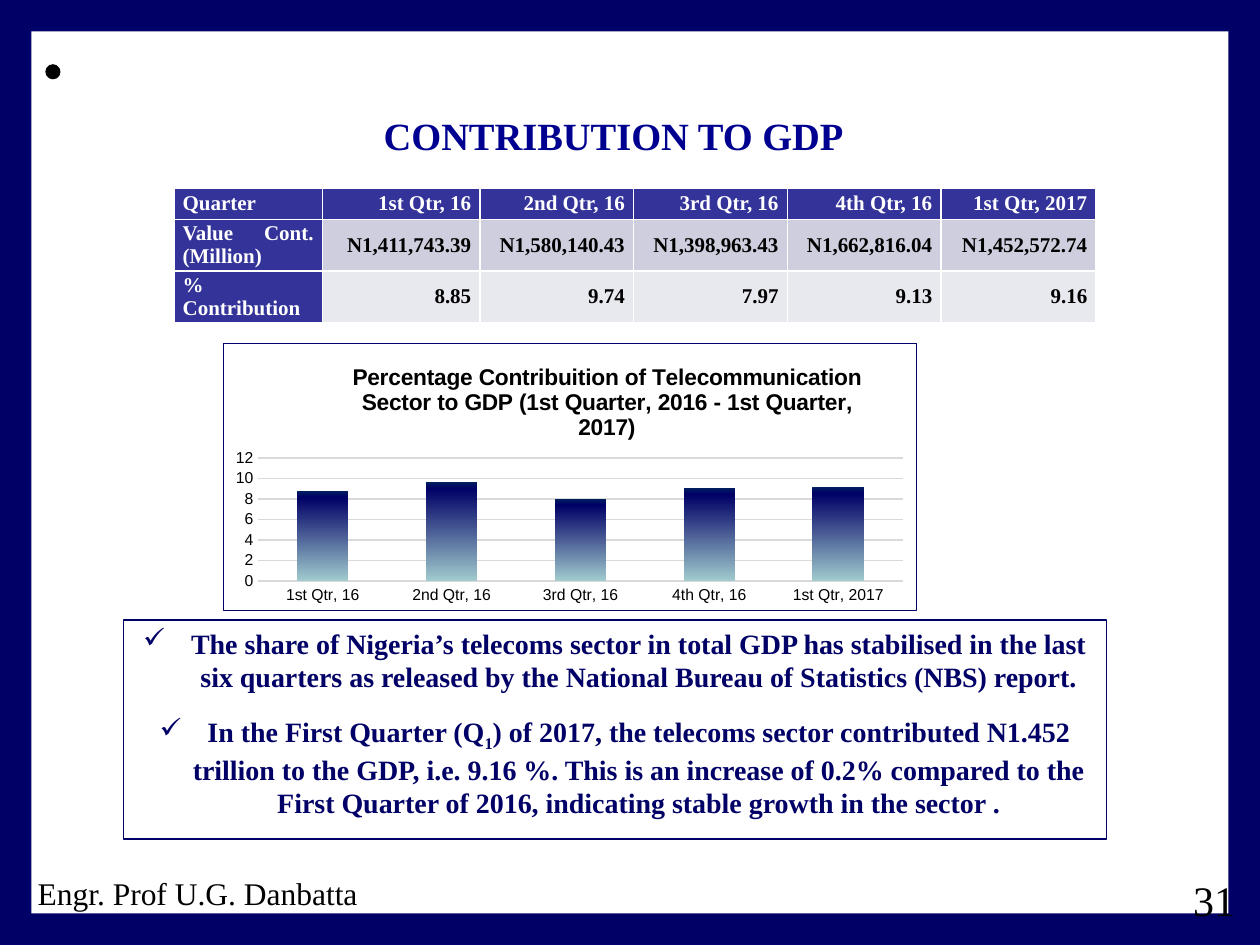
from copy import deepcopy
from dataclasses import dataclass

from pptx import Presentation
from pptx.chart.data import CategoryChartData
from pptx.dml.color import RGBColor
from pptx.enum.chart import XL_CHART_TYPE, XL_TICK_MARK
from pptx.enum.shapes import MSO_SHAPE
from pptx.enum.text import MSO_ANCHOR, PP_ALIGN
from pptx.oxml import parse_xml
from pptx.oxml.ns import nsdecls, qn
from pptx.util import Inches, Pt


@dataclass(frozen=True)
class Theme:
    serif: str = "Times New Roman"
    sans: str = "Arial"
    navy: str = "000066"
    heading: str = "000090"
    header: str = "333399"
    bands: tuple = ("CECEDE", "E8E8EF")
    white: str = "FFFFFF"
    black: str = "000000"
    grid: str = "D9D9D9"
    bar_stops: tuple = ((0, "002060"), (0.07, "000066"), (1, "A1CBCE"))
    heading_size: int = 22
    table_size: int = 12
    body_size: int = 16
    footer_size: int = 18
    number_size: int = 24
    chart_title_size: int = 13
    chart_size: int = 10
    axis_size: int = 9


@dataclass(frozen=True)
class Box:
    left: float
    top: float
    width: float
    height: float

    def lengths(self) -> list:
        return [Inches(n) for n in (self.left, self.top, self.width, self.height)]


@dataclass(frozen=True)
class Label:
    text: str
    box: Box
    size: int
    color: str = "000000"
    bold: bool = False
    align: PP_ALIGN = PP_ALIGN.LEFT


THEME = Theme()
QUARTERS = ("1st Qtr, 16", "2nd Qtr, 16", "3rd Qtr, 16", "4th Qtr, 16", "1st Qtr, 2017")
TABLE_ROWS = (
    ("Quarter", *QUARTERS),
    ("Value Cont.\v(Million)", "N1,411,743.39", "N1,580,140.43", "N1,398,963.43",
     "N1,662,816.04", "N1,452,572.74"),
    ("% Contribution", "8.85", "9.74", "7.97", "9.13", "9.16"),
)
COLUMN_WIDTHS = (1.18, 1.25, 1.22, 1.22, 1.22, 1.23)
ROW_HEIGHTS = (0.25, 0.41, 0.41)
CHART_TITLE = ("Percentage Contribuition of Telecommunication Sector to GDP "
               "(1st Quarter, 2016 - 1st Quarter, 2017)")
SHARES = (8.8, 9.7, 8, 9.1, 9.2)
# Each bullet is a list of (text, is subscript) pieces.
BULLETS = (
    (("The share of Nigeria’s telecoms sector in total GDP has stabilised in the last six "
      "quarters as released by the National Bureau of Statistics (NBS) report.", False),),
    (("In the First Quarter (Q", False), ("1", True),
     (") of 2017, the telecoms sector contributed N1.452 trillion to the GDP, i.e. 9.16 %. "
      "This is an increase of 0.2% compared to the First Quarter of 2016, indicating stable "
      "growth in the sector .", False)),
)
LABELS = (
    Label("CONTRIBUTION TO GDP", Box(0.37, 0.84, 9, 0.55), THEME.heading_size,
          THEME.heading, True, PP_ALIGN.CENTER),
    Label("Engr. Prof U.G. Danbatta", Box(0.2, 6.89, 5.29, 0.4), THEME.footer_size),
    Label("31", Box(9.37, 6.89, 1.08, 0.4), THEME.number_size),
)


def rgb(color: str) -> RGBColor:
    return RGBColor.from_string(color)


def style_font(font, size: int, color: str, bold: bool = False, name: str = THEME.serif) -> None:
    formats = {"name": name, "size": Pt(size), "bold": bold}
    for attribute, value in formats.items():
        setattr(font, attribute, value)
    font.color.rgb = rgb(color)


def add_block(slide, box: Box, fill: str = "", line: str = "", preset=MSO_SHAPE.RECTANGLE):
    shape = slide.shapes.add_shape(preset, *box.lengths())
    shape.shadow.inherit = False
    if fill:
        shape.fill.solid()
        shape.fill.fore_color.rgb = rgb(fill)
    else:
        shape.fill.background()
    if line:
        shape.line.color.rgb = rgb(line)
        shape.line.width = Pt(0.75)
    else:
        shape.line.fill.background()
    return shape


def add_label(slide, label: Label) -> None:
    frame = slide.shapes.add_textbox(*label.box.lengths()).text_frame
    frame.word_wrap = True
    paragraph = frame.paragraphs[0]
    paragraph.alignment = label.align
    run = paragraph.add_run()
    run.text = label.text
    style_font(run.font, label.size, label.color, label.bold)


def fill_cell(cell, text: str, fill: str, color: str, align: PP_ALIGN) -> None:
    formats = {"margin_left": Inches(0.07), "margin_right": Inches(0.07), "margin_top": 0,
               "margin_bottom": 0, "vertical_anchor": MSO_ANCHOR.MIDDLE, "text": text}
    for attribute, value in formats.items():
        setattr(cell, attribute, value)
    cell.fill.solid()
    cell.fill.fore_color.rgb = rgb(fill)
    paragraph = cell.text_frame.paragraphs[0]
    paragraph.alignment = align
    for run in paragraph.runs:
        style_font(run.font, THEME.table_size, color, True)
    for line_break in paragraph._p.findall(qn("a:br")):
        line_break.append(deepcopy(paragraph.runs[0].font._element))


def add_gdp_table(slide) -> None:
    box = Box(1.38, 1.49, sum(COLUMN_WIDTHS), sum(ROW_HEIGHTS))
    table = slide.shapes.add_table(len(TABLE_ROWS), len(QUARTERS) + 1, *box.lengths()).table
    table.horz_banding = False
    for column, width in zip(table.columns, COLUMN_WIDTHS):
        column.width = Inches(width)
    for i, (row, height) in enumerate(zip(table.rows, ROW_HEIGHTS)):
        row.height = Inches(height)
        for j, text in enumerate(TABLE_ROWS[i]):
            is_header = i == 0 or j == 0
            fill_cell(table.cell(i, j), text,
                      THEME.header if is_header else THEME.bands[i - 1],
                      THEME.white if is_header else THEME.black,
                      PP_ALIGN.RIGHT if j else PP_ALIGN.JUSTIFY)


def set_layout(element, index: int, **places: float) -> None:
    """Place a chart part by fractions of the chart's size."""
    for old in element.findall(qn("c:layout")):
        element.remove(old)
    target = '<c:layoutTarget val="inner"/>' if "w" in places else ""
    modes = "".join(f'<c:{key}Mode val="edge"/>' for key in "xy")
    values = "".join(f'<c:{key} val="{value}"/>' for key, value in places.items())
    element.insert(index, parse_xml(
        f'<c:layout {nsdecls("c")}><c:manualLayout>{target}{modes}{values}'
        "</c:manualLayout></c:layout>"))


def shade_bars(series) -> None:
    fill = series.format.fill
    fill.gradient()
    fill.gradient_angle = 270
    stop_list = series._element.find(".//" + qn("a:gsLst"))
    stop_list.append(deepcopy(stop_list[0]))
    for stop, (position, color) in zip(fill.gradient_stops, THEME.bar_stops):
        stop.position = position
        stop.color.rgb = rgb(color)


def add_share_chart(slide) -> None:
    data = CategoryChartData()
    data.categories = QUARTERS
    data.add_series("Series 1", SHARES)
    chart = slide.shapes.add_chart(XL_CHART_TYPE.COLUMN_CLUSTERED,
                                   *Box(1.77, 2.72, 5.51, 2.13).lengths(), data).chart
    style_font(chart.font, THEME.chart_size, THEME.black, name=THEME.sans)
    chart.has_legend = False
    chart.has_title = True
    chart.chart_title.include_in_layout = False
    paragraph = chart.chart_title.text_frame.paragraphs[0]
    run = paragraph.add_run()
    run.text = CHART_TITLE
    style_font(run.font, THEME.chart_title_size, THEME.black, True, THEME.sans)
    set_layout(chart.chart_title._element, 1, x=0.18, y=0.06)
    set_layout(chart._chartSpace.chart.plotArea, 0, x=0.05, y=0.43, w=0.93, h=0.46)

    plot = chart.plots[0]
    plot.gap_width = 150
    plot.vary_by_categories = False
    shade_bars(plot.series[0])
    for axis in (chart.category_axis, chart.value_axis):
        axis.major_tick_mark = axis.minor_tick_mark = XL_TICK_MARK.NONE
        style_font(axis.tick_labels.font, THEME.axis_size, THEME.black, name=THEME.sans)
    axis_values = chart.value_axis
    axis_values.minimum_scale, axis_values.maximum_scale, axis_values.major_unit = 0, 12, 2
    axis_values.format.line.fill.background()
    for line in (chart.category_axis.format.line, axis_values.major_gridlines.format.line):
        line.color.rgb = rgb(THEME.grid)
        line.width = Pt(0.75)
    chart._chartSpace.chart.addnext(parse_xml(
        f'<c:spPr {nsdecls("c", "a")}><a:solidFill><a:srgbClr val="{THEME.white}"/></a:solidFill>'
        f'<a:ln w="{Pt(0.75)}"><a:solidFill><a:srgbClr val="{THEME.navy}"/></a:solidFill></a:ln>'
        "</c:spPr>"))


def add_findings(slide) -> None:
    frame = add_block(slide, Box(0.98, 4.92, 7.8, 1.74), line=THEME.navy).text_frame
    frame.word_wrap = True
    frame.vertical_anchor = MSO_ANCHOR.TOP
    for i, pieces in enumerate(BULLETS):
        paragraph = frame.add_paragraph() if i else frame.paragraphs[0]
        paragraph.alignment = PP_ALIGN.CENTER
        paragraph.space_after = Pt(12)
        properties = paragraph._p.get_or_add_pPr()
        properties.set("marL", str(Inches(0.38)))
        properties.set("indent", str(-Inches(0.38)))
        properties.append(parse_xml(f'<a:buChar {nsdecls("a")} char="✓"/>'))
        for text, is_subscript in pieces:
            run = paragraph.add_run()
            run.text = text
            style_font(run.font, THEME.body_size, THEME.navy, True)
            if is_subscript:
                run.font._element.set("baseline", "-25000")


def main() -> None:
    presentation = Presentation()
    presentation.slide_width, presentation.slide_height = Inches(10), Inches(7.5)
    slide = presentation.slides.add_slide(presentation.slide_layouts[6])
    slide.background.fill.solid()
    slide.background.fill.fore_color.rgb = rgb(THEME.navy)
    add_block(slide, Box(0.25, 0.25, 9.5, 7), THEME.white)
    add_block(slide, Box(0.36, 0.51, 0.12, 0.12), THEME.black, preset=MSO_SHAPE.OVAL)
    add_gdp_table(slide)
    add_share_chart(slide)
    add_findings(slide)
    for label in LABELS:
        add_label(slide, label)
    presentation.save("out.pptx")


if __name__ == "__main__":
    main()
